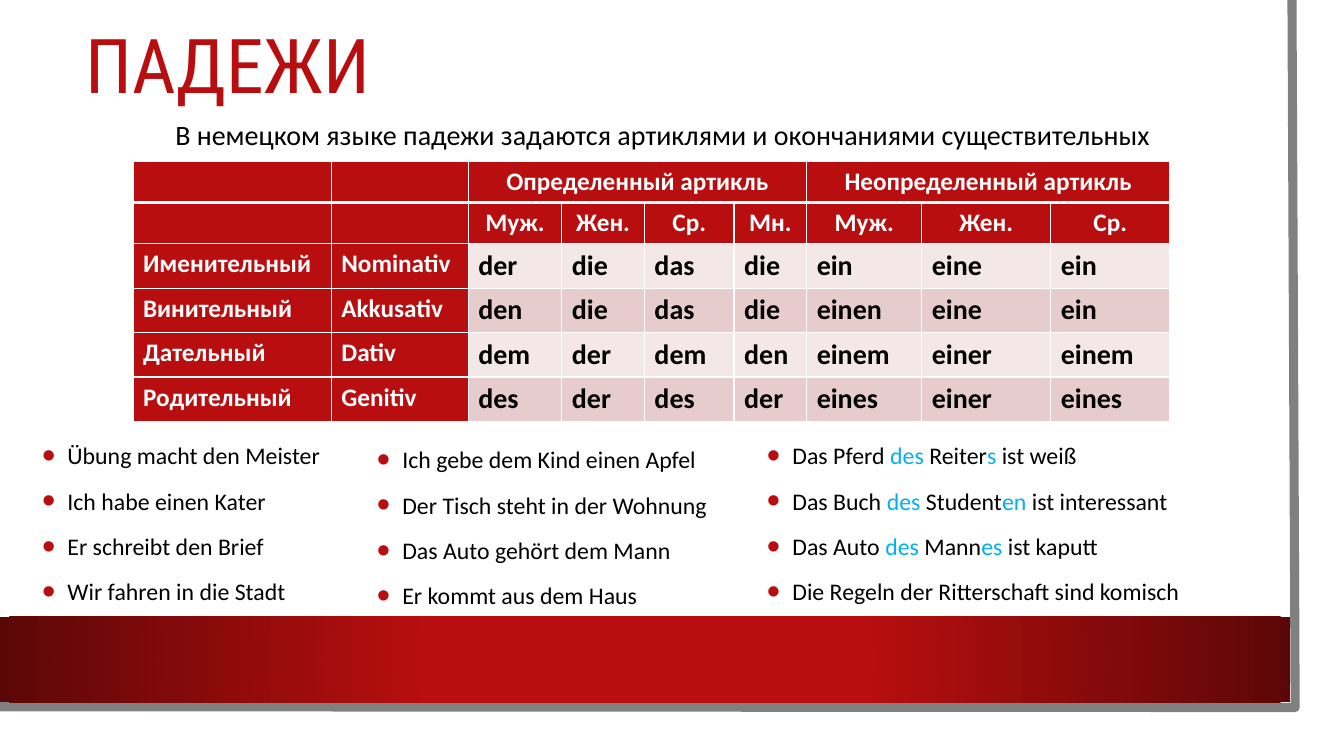
import pptx
import pptx.dml.color
import pptx.enum.dml
import pptx.enum.shapes
import pptx.enum.text
import pptx.oxml.ns
import pptx.util
from lxml import etree
from pptx.dml.color import RGBColor
from pptx.util import Cm

RED = RGBColor(0xB8, 0x0E, 0x0F)
DARK_RED = RGBColor(0x5C, 0x07, 0x07)
GRAY = RGBColor(0x80, 0x80, 0x80)
WHITE = RGBColor(0xFF, 0xFF, 0xFF)
BLACK = RGBColor(0x00, 0x00, 0x00)
BLUE = RGBColor(0x00, 0xB0, 0xF0)
LIGHT_BAND = RGBColor(0xF3, 0xE7, 0xE7)
DARK_BAND = RGBColor(0xE6, 0xCC, 0xCC)

COLUMN_WIDTHS = [5, 3.45, 2.36, 2.08, 2.26, 1.83, 2.9, 3.25, 3]
HEADER_HEIGHT, CASE_HEIGHT = 1.04, 1.12
CASES = [
    ["", "", "Определенный артикль", "", "", "", "Неопределенный артикль", "", ""],
    ["", "", "Муж.", "Жен.", "Ср.", "Мн.", "Муж.", "Жен.", "Ср."],
    ["Именительный", "Nominativ", "der", "die", "das", "die", "ein", "eine", "ein"],
    ["Винительный", "Akkusativ", "den", "die", "das", "die", "einen", "eine", "ein"],
    ["Дательный", "Dativ", "dem", "der", "dem", "den", "einem", "einer", "einem"],
    ["Родительный", "Genitiv", "des", "der", "des", "der", "eines", "einer", "eines"],
]

# Left, top, width and sentences; text between bars is highlighted
EXAMPLES = [
    (0.81, 10.9, 8.48, ["Übung macht den Meister", "Ich habe einen Kater",
                        "Er schreibt den Brief", "Wir fahren in die Stadt"]),
    (9.25, 11, 9.83, ["Ich gebe dem Kind einen Apfel", "Der Tisch steht in der Wohnung",
                      "Das Auto gehört dem Mann", "Er kommt aus dem Haus"]),
    (19.08, 10.9, 12.34, ["Das Pferd |des| Reiter|s| ist weiß",
                          "Das Buch |des| Student|en| ist interessant",
                          "Das Auto |des| Mann|es| ist kaputt",
                          "Die Regeln der Ritterschaft sind komisch"]),
]


def add_element(parent, tag, **attributes):
    return etree.SubElement(parent, pptx.oxml.ns.qn(tag), **attributes)


def add_bullet(para):
    properties = para._p.get_or_add_pPr()
    properties.set("marL", str(Cm(0.64)))
    properties.set("indent", str(-Cm(0.64)))
    add_element(add_element(properties, "a:buClr"), "a:srgbClr", val=str(RED))
    add_element(properties, "a:buSzPct", val="160000")
    add_element(properties, "a:buFont", typeface="Arial")
    add_element(properties, "a:buChar", char="•")


def write_text(frame, lines, size, color=BLACK, font="Calibri", bold=False,
               align=None, line_spacing=None, space_before=0, bullet=False):
    for index, line in enumerate(lines):
        para = frame.add_paragraph() if index else frame.paragraphs[0]
        if bullet:
            add_bullet(para)
        para.alignment = align
        para.line_spacing = line_spacing
        para.space_before = pptx.util.Pt(space_before if index else 0)
        for part, words in enumerate(line.split("|")):
            span = para.add_run()
            span.text = words
            span.font.size = pptx.util.Pt(size)
            span.font.name = font
            span.font.bold = bold
            span.font.color.rgb = BLUE if part % 2 else color


def add_text_box(page, left, top, width, height, lines, wrap=True, middle=True, **text_format):
    frame = page.shapes.add_textbox(Cm(left), Cm(top), Cm(width), Cm(height)).text_frame
    frame.word_wrap = wrap
    anchors = pptx.enum.text.MSO_ANCHOR
    frame.vertical_anchor = anchors.MIDDLE if middle else anchors.TOP
    write_text(frame, lines, **text_format)


def add_rectangle(page, left, top, width, height):
    shape = page.shapes.add_shape(pptx.enum.shapes.MSO_SHAPE.RECTANGLE,
                                  Cm(left), Cm(top), Cm(width), Cm(height))
    shape.shadow.inherit = False
    shape.line.fill.background()
    return shape


def fill_radial(shape, inner, outer, inner_end):
    shape.fill.gradient()
    for stop, color, position in zip(shape.fill.gradient_stops, (inner, outer), (inner_end, 1)):
        stop.color.rgb = color
        stop.position = position
    gradient = shape._element.spPr.find(pptx.oxml.ns.qn("a:gradFill"))
    gradient.remove(gradient.find(pptx.oxml.ns.qn("a:lin")))
    circle = add_element(gradient, "a:path", path="circle")
    add_element(circle, "a:fillToRect", l="50000", t="50000", r="50000", b="50000")


def add_frame_edge(page):
    builder = page.shapes.build_freeform(Cm(32.56), Cm(0))
    builder.add_line_segments([(Cm(32.64), Cm(17.83)), (Cm(-0.08), Cm(17.81))], close=False)
    edge = builder.convert_to_shape()
    edge.shadow.inherit = False
    edge.fill.background()
    edge.line.color.rgb = GRAY
    edge.line.width = pptx.util.Pt(6.5)


def set_borders(cell, bottom_width):
    properties = cell._tc.get_or_add_tcPr()
    for side, width in (("L", 1), ("R", 1), ("T", 1), ("B", bottom_width)):
        line = add_element(properties, f"a:ln{side}", w=str(pptx.util.Pt(width)))
        add_element(add_element(line, "a:solidFill"), "a:srgbClr", val=str(WHITE))


def add_case_table(page):
    heights = [HEADER_HEIGHT] * 2 + [CASE_HEIGHT] * 4
    table = page.shapes.add_table(len(CASES), len(COLUMN_WIDTHS), Cm(3.35), Cm(4.06),
                                  Cm(sum(COLUMN_WIDTHS)), Cm(sum(heights))).table
    for column, width in zip(table.columns, COLUMN_WIDTHS):
        column.width = Cm(width)
    for row, height in zip(table.rows, heights):
        row.height = Cm(height)
    for row, texts in enumerate(CASES):
        for column, text in enumerate(texts):
            cell = table.cell(row, column)
            heading = row < 2 or column < 2
            set_borders(cell, bottom_width=1 if row else 3)
            cell.fill.solid()
            cell.fill.fore_color.rgb = RED if heading else (DARK_BAND if row % 2 else LIGHT_BAND)
            if text:
                write_text(cell.text_frame, [text], size=18 if heading else 20, bold=True,
                           color=WHITE if heading else BLACK,
                           align=pptx.enum.text.PP_ALIGN.CENTER if row < 2 else None)
    for first, last in ((2, 5), (6, 8)):
        table.cell(0, first).merge(table.cell(0, last))


def main():
    deck = pptx.Presentation()
    deck.slide_width, deck.slide_height = Cm(33.87), Cm(19.05)
    page = deck.slides.add_slide(deck.slide_layouts[6])

    # Card, its gray edge and the red band
    card = add_rectangle(page, 0, 0, 33.27, 18.47)
    card.fill.solid()
    card.fill.fore_color.rgb = WHITE
    add_frame_edge(page)
    band = add_rectangle(page, 0, 15.54, 32.51, 2.16)
    fill_radial(band, RED, DARK_RED, inner_end=0.34)

    # Title and introduction
    add_text_box(page, 1.9, 0.15, 28.88, 3.2, ["ПАДЕЖИ"], size=54, color=RED,
                 font="Roboto Condensed", line_spacing=0.9)
    add_text_box(page, 4.17, 2.84, 25.27, 1.12,
                 ["В немецком языке падежи задаются артиклями и окончаниями существительных"],
                 wrap=False, middle=False, size=20)

    # Articles by case
    add_case_table(page)

    # Example sentences
    for left, top, width, sentences in EXAMPLES:
        add_text_box(page, left, top, width, 4.5, sentences, size=17,
                     line_spacing=1.1, space_before=10, bullet=True)

    deck.save("out.pptx")


if __name__ == "__main__":
    main()
